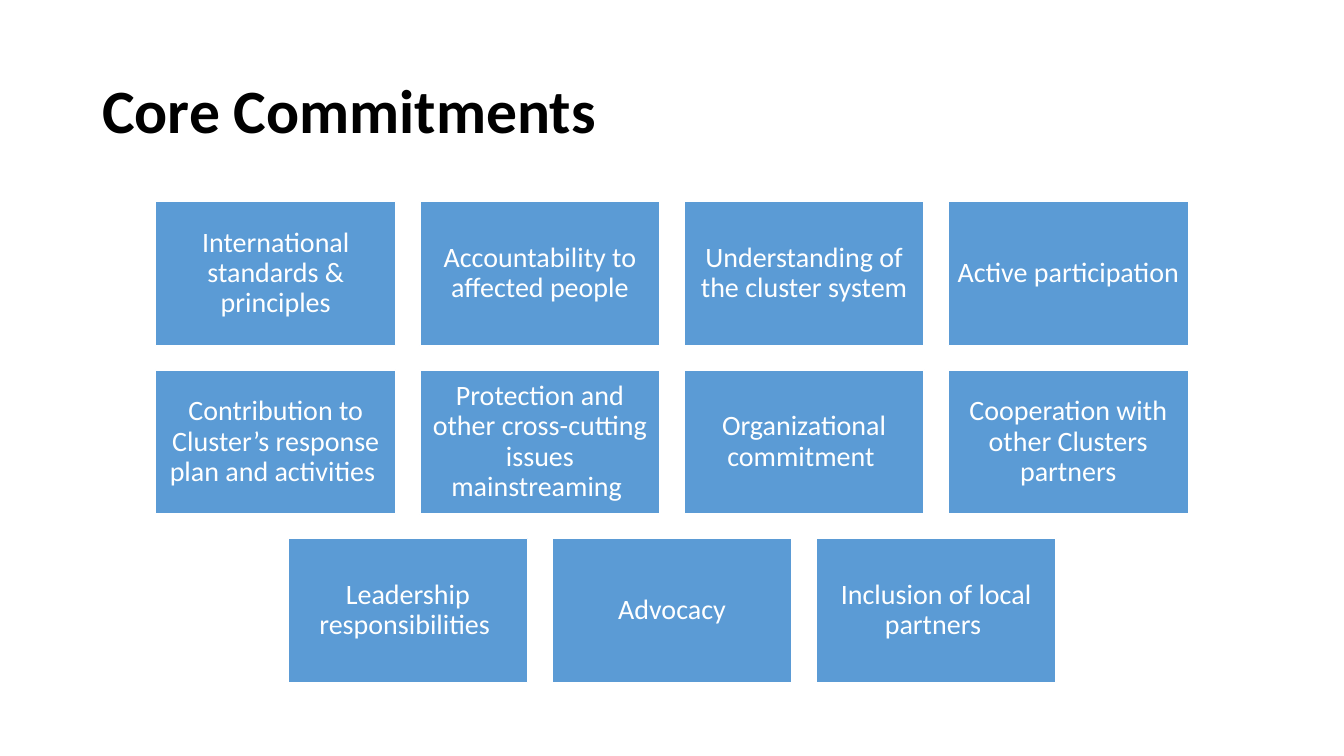
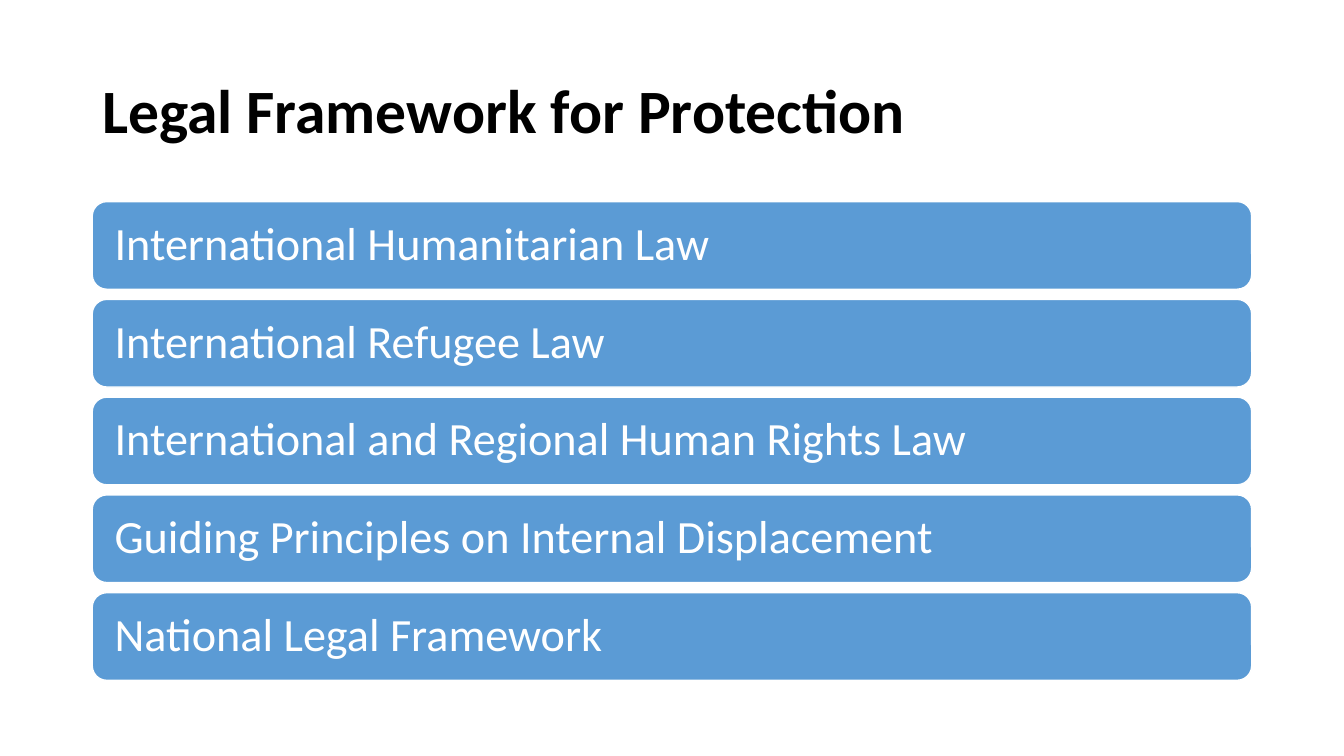
from dataclasses import dataclass

import pptx
import pptx.dml.color
import pptx.enum.shapes
import pptx.enum.text
import pptx.util

Inches, Pt = pptx.util.Inches, pptx.util.Pt
RGB = pptx.dml.color.RGBColor.from_string
Shape = pptx.enum.shapes.MSO_SHAPE
Align = pptx.enum.text.PP_ALIGN
Anchor = pptx.enum.text.MSO_ANCHOR


@dataclass(frozen=True)
class Theme:
    width: float = 13.33
    height: float = 7.5
    content_width: float = 11.5
    body_top: float = 2
    font: str = "Calibri"
    line_spacing: float = 0.9
    title_size: int = 44
    tile_size: int = 20
    bar_size: int = 33
    ink: str = "000000"
    paper: str = "FFFFFF"
    accent: str = "5B9BD5"


@dataclass(frozen=True)
class Box:
    """Look of one grid cell: size and gap in inches, text size in points."""
    shape: int
    width: float
    height: float
    gap: float
    size: int
    align: int
    inset_x: float
    inset_y: float


THEME = Theme()
TILE = Box(Shape.RECTANGLE, 2.38, 1.43, 0.24, THEME.tile_size,
           Align.CENTER, 0.08, 0.08)
BAR = Box(Shape.ROUNDED_RECTANGLE, THEME.content_width, 0.87, 0.1,
          THEME.bar_size, Align.LEFT, 0.18, 0.14)


class Deck:
    def __init__(self, theme):
        self.theme = theme
        self.prs = pptx.Presentation()
        self.prs.slide_width = Inches(theme.width)
        self.prs.slide_height = Inches(theme.height)
        self.s = None

    def slide(self, title):
        """Start a slide with the shared title style."""
        t = self.theme
        self.s = self.prs.slides.add_slide(self.prs.slide_layouts[6])
        sp = self.s.shapes.add_textbox(
            Inches((t.width - t.content_width) / 2), Inches(0.4),
            Inches(t.content_width), Inches(1.45))
        self.text(sp, title, t.title_size, t.ink, Align.LEFT, 0.1, 0.05, bold=True)

    def text(self, sp, text, size, color, align, inset_x, inset_y, bold=False):
        tf = sp.text_frame
        tf.word_wrap = True
        tf.vertical_anchor = Anchor.MIDDLE
        tf.margin_left = tf.margin_right = Inches(inset_x)
        tf.margin_top = tf.margin_bottom = Inches(inset_y)
        p = tf.paragraphs[0]
        p.text = text
        p.alignment = align
        p.line_spacing = self.theme.line_spacing
        p.font.name = self.theme.font
        p.font.size = Pt(size)
        p.font.bold = bold
        p.font.color.rgb = RGB(color)

    def box(self, text, left, top, look):
        t = self.theme
        sp = self.s.shapes.add_shape(look.shape, Inches(left), Inches(top),
                                     Inches(look.width), Inches(look.height))
        sp.shadow.inherit = False
        sp.fill.solid()
        sp.fill.fore_color.rgb = RGB(t.accent)
        sp.line.color.rgb = RGB(t.paper)
        sp.line.width = Pt(1)
        self.text(sp, text, look.size, t.paper, look.align,
                  look.inset_x, look.inset_y)

    def grid(self, labels, columns, look):
        """Fill rows of boxes, each row centred on the slide."""
        step_x, step_y = look.width + look.gap, look.height + look.gap
        for row, start in enumerate(range(0, len(labels), columns)):
            cells = labels[start:start + columns]
            left = (self.theme.width - len(cells) * step_x + look.gap) / 2
            top = self.theme.body_top + row * step_y
            for col, label in enumerate(cells):
                self.box(label, left + col * step_x, top, look)


def main():
    deck = Deck(THEME)

    # Commitments as tiles
    deck.slide("Core Commitments")
    deck.grid([
        "International standards & principles",
        "Accountability to affected people",
        "Understanding of the cluster system",
        "Active participation ",
        "Contribution to Cluster’s response plan and activities ",
        "Protection and other cross-cutting issues mainstreaming ",
        "Organizational commitment ",
        "Cooperation with other Clusters partners",
        "Leadership responsibilities ",
        "Advocacy",
        "Inclusion of local partners ",
    ], 4, TILE)

    # Legal sources as full-width bars
    deck.slide("Legal Framework for Protection")
    deck.grid([
        "International Humanitarian Law",
        "International Refugee Law",
        "International and Regional Human Rights Law",
        "Guiding Principles on Internal Displacement",
        "National Legal Framework",
    ], 1, BAR)

    deck.prs.save("out.pptx")


if __name__ == "__main__":
    main()
